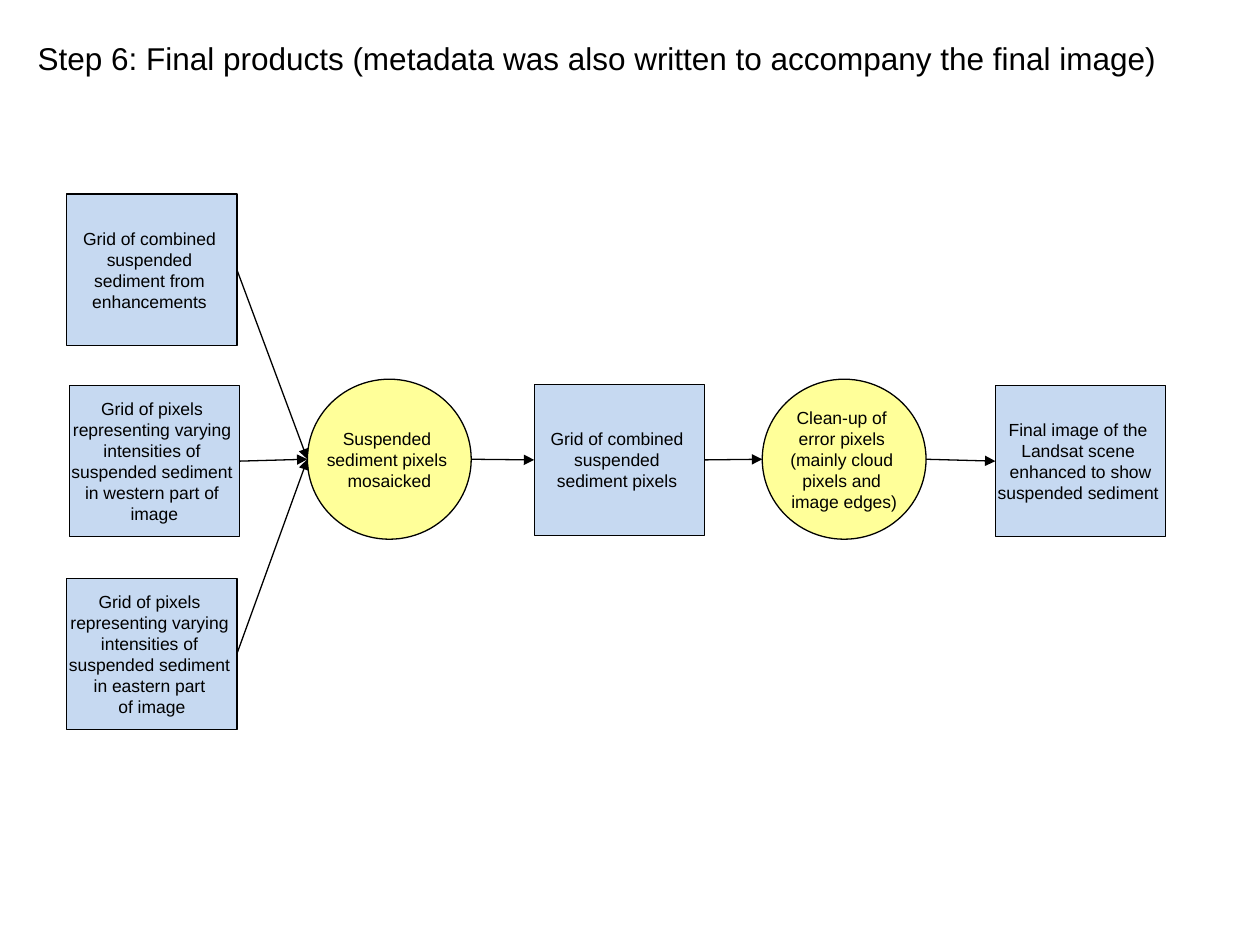
import dataclasses

import pptx
import pptx.dml.color
import pptx.enum.shapes
import pptx.enum.text
import pptx.oxml.ns
import pptx.util
from lxml import etree

SLIDE_W = pptx.util.Inches(10)
SLIDE_H = pptx.util.Inches(7.5)
COLS, ROWS = 100, 75
DATA_SIZE = (13.5, 12)
PROCESS_SIZE = (13, 12.7)


@dataclasses.dataclass(frozen=True)
class Theme:
    """Colours, font and sizes used on the slide."""

    ink: str = "000000"
    data: str = "C6D9F1"
    process: str = "FFFF99"
    font: str = "Arial"
    title_pt: float = 18
    label_pt: float = 10
    line_pt: float = 0.75


THEME = Theme()


def x(cols):
    """Convert grid columns to a length."""
    return round(SLIDE_W * cols / COLS)


def y(rows):
    """Convert grid rows to a length."""
    return round(SLIDE_H * rows / ROWS)


def rgb(value):
    """Return a colour object for a hex string."""
    return pptx.dml.color.RGBColor.from_string(value)


def style_text(tf, size, align):
    """Format every paragraph of a text frame."""
    for p in tf.paragraphs:
        p.alignment = align
        for r in p.runs:
            r.font.name = THEME.font
            r.font.size = pptx.util.Pt(size)
            r.font.color.rgb = rgb(THEME.ink)


def style_line(line):
    """Apply the common outline."""
    line.color.rgb = rgb(THEME.ink)
    line.width = pptx.util.Pt(THEME.line_pt)


def add_title(s, text):
    """Add the heading across the top."""
    tf = s.shapes.add_textbox(x(2), y(2.6), x(93.5), y(4)).text_frame
    tf.word_wrap = True
    tf.auto_size = pptx.enum.text.MSO_AUTO_SIZE.SHAPE_TO_FIT_TEXT
    tf.text = text
    style_text(tf, THEME.title_pt, pptx.enum.text.PP_ALIGN.LEFT)


def add_node(s, kind, left, top, size, fill, lines):
    """Add a filled shape with a centred label."""
    sp = s.shapes.add_shape(kind, x(left), y(top), x(size[0]), y(size[1]))
    sp.shadow.inherit = False
    sp.fill.solid()
    sp.fill.fore_color.rgb = rgb(fill)
    style_line(sp.line)
    tf = sp.text_frame
    tf.word_wrap = False
    tf.vertical_anchor = pptx.enum.text.MSO_ANCHOR.MIDDLE
    tf.text = "\n".join(lines)
    style_text(tf, THEME.label_pt, pptx.enum.text.PP_ALIGN.CENTER)
    return sp


def add_data(s, left, top, lines):
    """Add a box that stands for a data set."""
    kind = pptx.enum.shapes.MSO_SHAPE.FLOWCHART_PROCESS
    return add_node(s, kind, left, top, DATA_SIZE, THEME.data, lines)


def add_process(s, left, lines):
    """Add a circle that stands for a processing step."""
    kind = pptx.enum.shapes.MSO_SHAPE.OVAL
    return add_node(s, kind, left, 30.1, PROCESS_SIZE, THEME.process, lines)


def add_arrow(s, source, target):
    """Draw an arrow from the right of one node to the left of another."""
    cxn = s.shapes.add_connector(
        pptx.enum.shapes.MSO_CONNECTOR.STRAIGHT,
        source.left + source.width, source.top + source.height // 2,
        target.left, target.top + target.height // 2)
    style_line(cxn.line)
    ln = cxn.line._get_or_add_ln()
    etree.SubElement(ln, pptx.oxml.ns.qn("a:tailEnd"), type="triangle")
    etree.SubElement(cxn._element.spPr, pptx.oxml.ns.qn("a:effectLst"))


def main():
    """Build the flow chart slide."""
    prs = pptx.Presentation()
    prs.slide_width, prs.slide_height = SLIDE_W, SLIDE_H
    s = prs.slides.add_slide(prs.slide_layouts[6])
    add_title(s, "Step 6: Final products (metadata was also written "
                 "to accompany the final image)")

    varying = ["Grid of pixels ", "representing varying ", "intensities of ",
               "suspended sediment "]
    inputs = [
        add_data(s, 5.3, 15.4, ["Grid of combined ", "suspended ",
                                "sediment from ", "enhancements "]),
        add_data(s, 5.5, 30.6, varying + ["in western part of ", "image"]),
        add_data(s, 5.3, 45.9, varying + ["in eastern part ", "of image"]),
    ]
    chain = [
        add_process(s, 24.4, ["Suspended ", "sediment pixels ", "mosaicked"]),
        add_data(s, 42.4, 30.5, ["Grid of combined ", "suspended ",
                                 "sediment pixels "]),
        add_process(s, 60.5, ["Clean-up of ", "error pixels ",
                              "(mainly cloud ", "pixels and ",
                              "image edges)"]),
        add_data(s, 79, 30.6, ["Final image of the ", "Landsat scene ",
                               "enhanced to show", "suspended sediment "]),
    ]
    for source in inputs:
        add_arrow(s, source, chain[0])
    for source, target in zip(chain, chain[1:]):
        add_arrow(s, source, target)
    prs.save("out.pptx")


if __name__ == "__main__":
    main()
